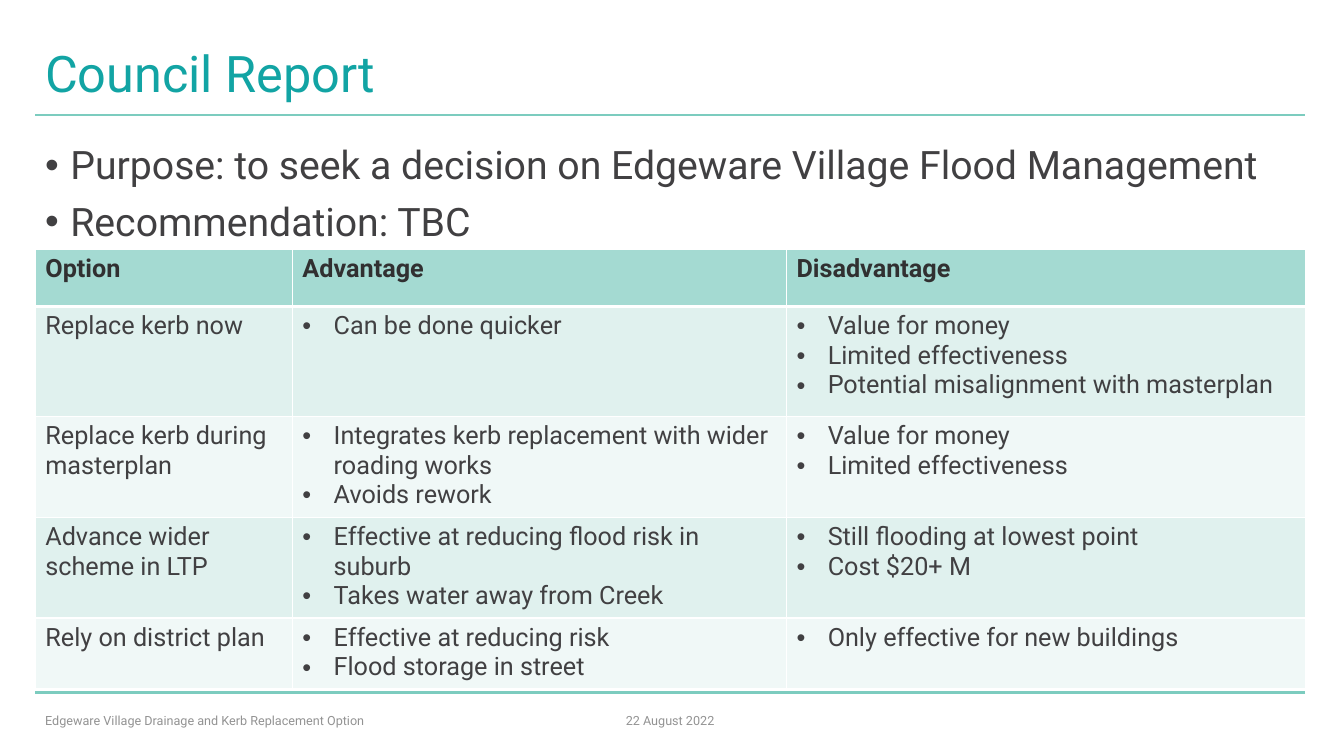
import pptx
import pptx.util
import pptx.dml.color
import pptx.enum.shapes
import pptx.enum.text
import pptx.oxml
import pptx.oxml.ns
from lxml import etree

PX = 9144  # 100 px to the inch
FONT = "Roboto"
COLORS = {
    "title": "12A4A4", "rule": "7CCCBF", "text": "414042", "header": "313031",
    "footer": "939393", "header_fill": "A4DAD2", "odd_fill": "E0F1EE",
    "even_fill": "F0F8F7", "border": "FFFFFF",
}


def add_text(para, text, size, color, bold=False, bullet_indent=0):
    """Add one run, with a hanging bullet when an indent in px is given."""
    if bullet_indent:
        props = para._p.get_or_add_pPr()
        props.set("marL", str(bullet_indent * PX))
        props.set("indent", str(-bullet_indent * PX))
        etree.SubElement(props, pptx.oxml.ns.qn("a:buFont"), typeface="Arial")
        etree.SubElement(props, pptx.oxml.ns.qn("a:buChar"), char="•")
    span = para.add_run()
    span.text = text
    span.font.name = FONT
    span.font.size = pptx.util.Pt(size)
    span.font.bold = bold
    span.font.color.rgb = pptx.dml.color.RGBColor.from_string(COLORS[color])


def add_box(left, top, width, height, anchor="MIDDLE"):
    box = page.shapes.add_textbox(left * PX, top * PX, width * PX, height * PX)
    box.text_frame.word_wrap = True
    box.text_frame.vertical_anchor = pptx.enum.text.MSO_ANCHOR[anchor]
    return box.text_frame


deck = pptx.Presentation()
deck.slide_width = 1333 * PX
deck.slide_height = 750 * PX
page = deck.slides.add_slide(deck.slide_layouts[6])

# Rules under the title and above the footer
for y in (687, 114):
    rule = page.shapes.add_connector(
        pptx.enum.shapes.MSO_CONNECTOR.STRAIGHT, 35 * PX, y * PX, 1294 * PX, y * PX)
    rule.line.color.rgb = pptx.dml.color.RGBColor.from_string(COLORS["rule"])
    rule.line.width = pptx.util.Pt(1.5)
    etree.SubElement(rule._element.spPr, pptx.oxml.ns.qn("a:effectLst"))

# Title
title = add_box(35, 40, 1260, 72).paragraphs[0]
title.line_spacing = 0.9
add_text(title, "Council Report", 36, "title")

# Footer
date = add_box(607, 695, 115, 40).paragraphs[0]
date.alignment = pptx.enum.text.PP_ALIGN.CENTER
add_text(date, "22 August 2022", 9, "footer")
add_text(add_box(35, 695, 503, 40).paragraphs[0],
         "Edgeware Village Drainage and Kerb Replacement Option", 9, "footer")

# Purpose and recommendation
body = add_box(35, 140, 1260, 595, "TOP")
points = ["Purpose: to seek a decision on Edgeware Village Flood Management",
          "Recommendation: TBC"]
for number, point in enumerate(points):
    para = body.add_paragraph() if number else body.paragraphs[0]
    para.line_spacing = 0.9
    if number:
        para.space_before = pptx.util.Pt(10)
    add_text(para, point, 28, "text", bullet_indent=25)

# Options table
rows = [
    [["Option"], ["Advantage"], ["Disadvantage"]],
    [["Replace kerb now"],
     ["Can be done quicker"],
     ["Value for money", "Limited effectiveness", "Potential misalignment with masterplan"]],
    [["Replace kerb during masterplan"],
     ["Integrates kerb replacement with wider roading works", "Avoids rework"],
     ["Value for money", "Limited effectiveness"]],
    [["Advance wider scheme in LTP"],
     ["Effective at reducing flood risk in suburb", "Takes water away from Creek"],
     ["Still flooding at lowest point", "Cost $20+ M"]],
    [["Rely on district plan"],
     ["Effective at reducing risk", "Flood storage in street"],
     ["Only effective for new buildings"]],
]
widths = [255, 490, 515]
heights = [57, 109, 98, 98, 68]
table = page.shapes.add_table(
    len(rows), len(widths), 35 * PX, 247 * PX, sum(widths) * PX, sum(heights) * PX).table
table.first_row = table.horz_banding = False
for column, width in zip(table.columns, widths):
    column.width = width * PX
for row, height in zip(table.rows, heights):
    row.height = height * PX

for r, row in enumerate(rows):
    is_header = r == 0
    fill = "header_fill" if is_header else "odd_fill" if r % 2 else "even_fill"
    for c, lines in enumerate(row):
        cell = table.cell(r, c)
        cell.fill.solid()
        cell.fill.fore_color.rgb = pptx.dml.color.RGBColor.from_string(COLORS[fill])

        # White borders, thicker below the header
        points_wide = {"lnL": 1, "lnR": 1, "lnT": 3 if r == 1 else 1, "lnB": 3 if is_header else 1}
        for position, (side, weight) in enumerate(points_wide.items()):
            border = pptx.oxml.parse_xml(
                f'<a:{side} {pptx.oxml.ns.nsdecls("a")} w="{weight * 12700}"><a:solidFill>'
                f'<a:srgbClr val="{COLORS["border"]}"/></a:solidFill></a:{side}>')
            cell._tc.get_or_add_tcPr().insert(position, border)

        for number, line in enumerate(lines):
            para = cell.text_frame.add_paragraph() if number else cell.text_frame.paragraphs[0]
            add_text(para, line, 18, "header" if is_header else "text", bold=is_header,
                     bullet_indent=0 if is_header or c == 0 else 31)

deck.save("out.pptx")
